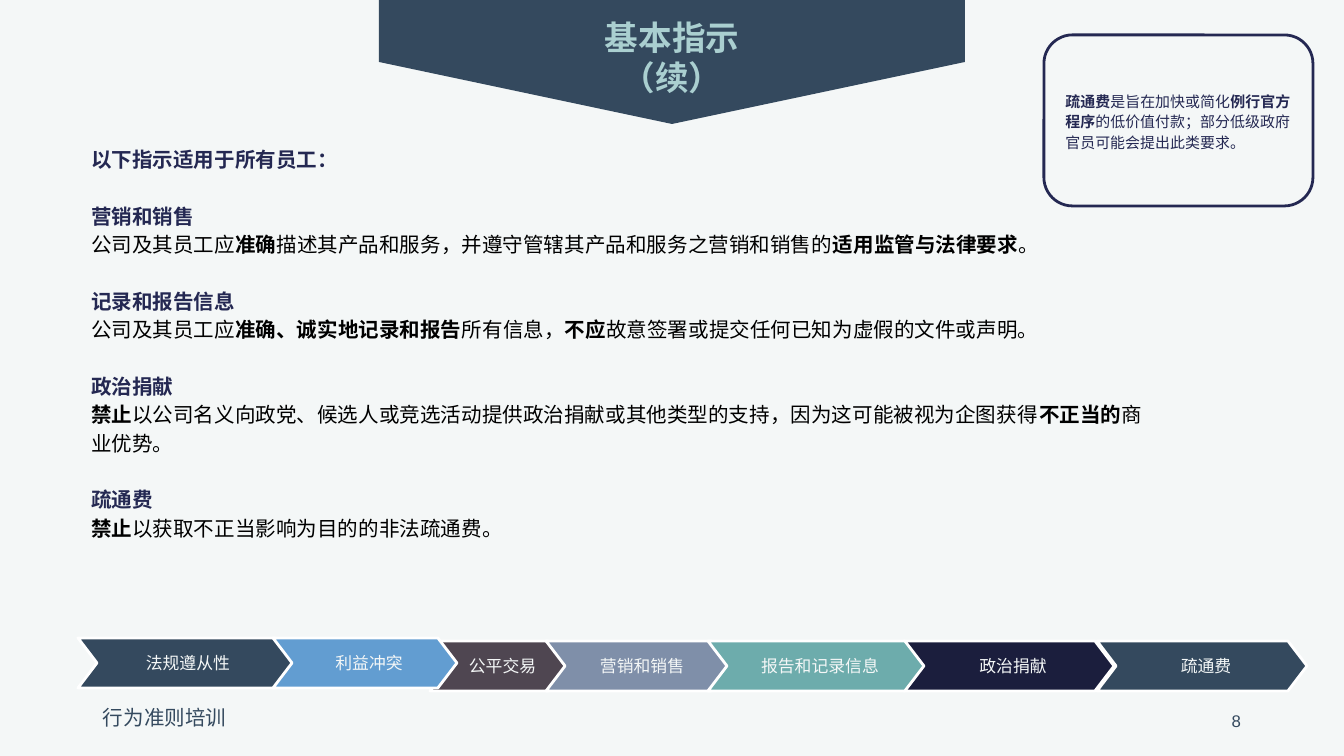
import pptx
import pptx.util
from pptx.dml.color import RGBColor
from pptx.enum.shapes import MSO_SHAPE
from pptx.enum.text import MSO_ANCHOR, PP_ALIGN

PX = 914400 / 134.4  # EMU in one px
Pt = pptx.util.Pt

PAPER = RGBColor(0xF4, 0xF7, 0xF7)
SLATE = RGBColor(0x34, 0x49, 0x5E)
MINT = RGBColor(0xAA, 0xCF, 0xD0)
NAVY = RGBColor(0x24, 0x28, 0x52)
BLACK = RGBColor(0, 0, 0)
WHITE = RGBColor(0xFF, 0xFF, 0xFF)
BLUE = RGBColor(0x62, 0x9D, 0xD1)
PLUM = RGBColor(0x4F, 0x46, 0x51)
GREY_BLUE = RGBColor(0x7F, 0x8F, 0xA9)
TEAL = RGBColor(0x6D, 0xAC, 0xAC)
MIDNIGHT = RGBColor(0x1B, 0x1E, 0x3D)

INTRO = "以下指示适用于所有员工："
# Each section: heading, then (text, bold) runs
SECTIONS = [
    ("营销和销售", [
        ("公司及其员工应", False), ("准确", True),
        ("描述其产品和服务，并遵守管辖其产品和服务之营销和销售的", False),
        ("适用监管与法律要求", True), ("。", False)]),
    ("记录和报告信息", [
        ("公司及其员工应", False), ("准确、诚实地记录和报告", True),
        ("所有信息，", False), ("不应", True),
        ("故意签署或提交任何已知为虚假的文件或声明。", False)]),
    ("政治捐献", [
        ("禁止", True),
        ("以公司名义向政党、候选人或竞选活动提供政治捐献或其他类型的支持，"
         "因为这可能被视为企图获得", False),
        ("不正当的", True), ("商业优势。", False)]),
    ("疏通费", [
        ("禁止", True), ("以获取不正当影响为目的的非法疏通费。", False)]),
]
CALLOUT = [
    ("疏通费", True), ("是旨在加快或简化", False), ("例行官方程序", True),
    ("的低价值付款；部分低级政府官员可能会提出此类要求。", False)]
# Label, colour, left, top, width inside the bar; later steps overlap earlier ones
STEPS = [
    ("公平交易", PLUM, 352, 3, 137),
    ("政治捐献", MIDNIGHT, 826, 3, 210),
    ("营销和销售", GREY_BLUE, 468, 3, 184),
    ("报告和记录信息", TEAL, 630, 3, 216),
    ("法规遵从性 ", SLATE, 0, 0, 216),
    ("利益冲突", BLUE, 195, 0, 184),
    ("疏通费", SLATE, 1019, 3, 210),
]


def emu(*lengths):
    return [round(n * PX) for n in lengths]


def set_frame(sp, insets, anchor=MSO_ANCHOR.TOP):
    tf = sp.text_frame
    tf.word_wrap = True
    tf.vertical_anchor = anchor
    (tf.margin_left, tf.margin_top,
     tf.margin_right, tf.margin_bottom) = emu(*insets)
    return tf


def add_text(s, x, y, w, h, insets, anchor=MSO_ANCHOR.TOP):
    return set_frame(s.shapes.add_textbox(*emu(x, y, w, h)), insets, anchor)


def add_paragraph(tf, runs, size, color, font="Roboto", align=PP_ALIGN.LEFT,
                  spacing=None, before=0):
    """Fill the first paragraph if it is still empty, else append one."""
    p = tf.paragraphs[0] if not tf.text else tf.add_paragraph()
    p.alignment = align
    p.space_before = Pt(before)
    if spacing:
        p.line_spacing = spacing
    for text, bold in runs:
        r = p.add_run()
        r.text = text
        r.font.size = Pt(size)
        r.font.bold = bold
        r.font.color.rgb = color
        r.font.name = font
        ea = r.font._element.makeelement(
            pptx.oxml.ns.qn("a:ea"), {"typeface": font})
        r.font._element.append(ea)


def add_shape(shapes, kind, x, y, w, h, adj, fill=None, line=None):
    sp = shapes.add_shape(kind, *emu(x, y, w, h))
    sp.shadow.inherit = False
    sp.adjustments[0] = adj
    if fill is None:
        sp.fill.background()
    else:
        sp.fill.solid()
        sp.fill.fore_color.rgb = fill
    if line is None:
        sp.line.fill.background()
    else:
        sp.line.color.rgb = line
        sp.line.width = Pt(1.5)
    return sp


def title_banner(s, x, y, w, h):
    # The pentagon points right until turned, so its width and height swap
    sp = add_shape(s.shapes, MSO_SHAPE.PENTAGON, x + (w - h) / 2,
                   y + (h - w) / 2, h, w, 0.5, SLATE)
    sp.rotation = 90
    tf = add_text(s, x - 79, y + 12, w + 158, 87, (10, 5, 10, 5))
    for line in ("基本指示", "（续）"):
        add_paragraph(tf, [(line, True)], 18, MINT, align=PP_ALIGN.CENTER)


def instructions(s, x, y, w, h):
    tf = add_text(s, x, y, w, h, (13, 13, 13, 13))
    add_paragraph(tf, [(INTRO, True)], 11, NAVY, spacing=0.9)
    for heading, runs in SECTIONS:
        add_paragraph(tf, [(heading, True)], 11, NAVY, spacing=1.15, before=15.2)
        add_paragraph(tf, runs, 11, BLACK, spacing=1.15)


def callout(s, x, y, w, h):
    sp = add_shape(s.shapes, MSO_SHAPE.ROUNDED_RECTANGLE, x, y, w, h, 0.167,
                   line=NAVY)
    # Rounded corners push the text in by themselves
    tf = set_frame(sp, (13, 13, 13, 13), MSO_ANCHOR.MIDDLE)
    add_paragraph(tf, CALLOUT, 8, NAVY, spacing=1.15)


def step_bar(s, x, y, h):
    group = s.shapes.add_group_shape()
    for label, color, left, top, w in STEPS:
        sp = add_shape(group.shapes, MSO_SHAPE.CHEVRON, x + left, y + top, w, h,
                       0.382, color, WHITE)
        tf = set_frame(sp, (8, 0, 0, 0), MSO_ANCHOR.MIDDLE)
        add_paragraph(tf, [(label, False)], 9, PAPER, align=PP_ALIGN.CENTER)


def footer(s, x, y, w, h):
    tf = add_text(s, x, y, 323, h, (10, 5, 10, 5))
    add_paragraph(tf, [("行为准则培训", False)], 11, SLATE, "Noto Sans CJK SC")
    tf = add_text(s, x + w - 302, y, 302, h, (10, 5, 10, 5), MSO_ANCHOR.MIDDLE)
    add_paragraph(tf, [("8", False)], 9, SLATE, "Arial", PP_ALIGN.RIGHT)


def main():
    prs = pptx.Presentation()
    prs.slide_width, prs.slide_height = emu(1344, 756)
    s = prs.slides.add_slide(prs.slide_layouts[6])
    s.background.fill.solid()
    s.background.fill.fore_color.rgb = PAPER
    title_banner(s, 379, 0, 586, 124)
    instructions(s, 78, 137, 1083, 501)
    step_bar(s, 78, 638, 50)
    callout(s, 1044, 35, 269, 171)
    footer(s, 93, 700, 1158, 41)
    prs.save("out.pptx")


if __name__ == "__main__":
    main()
